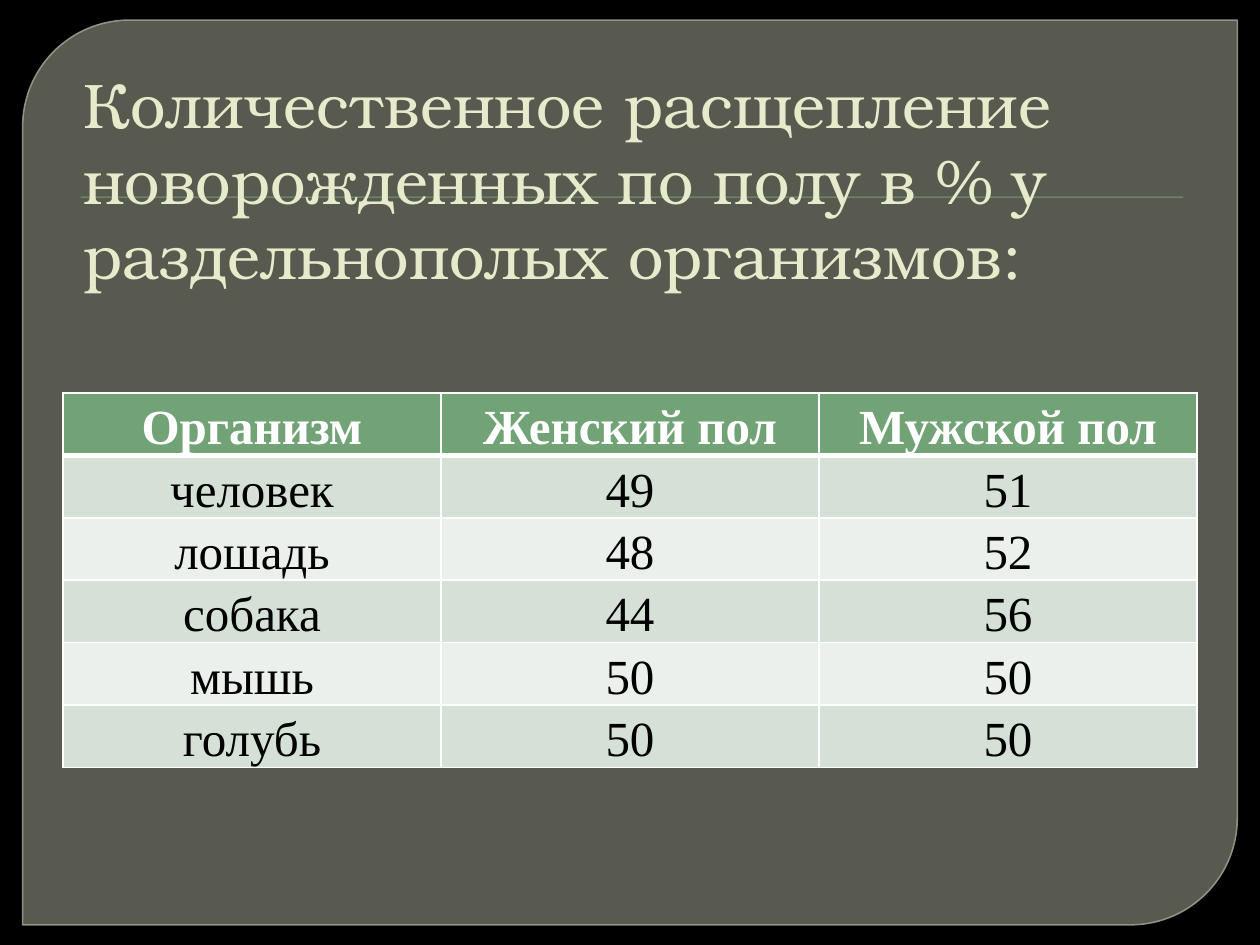
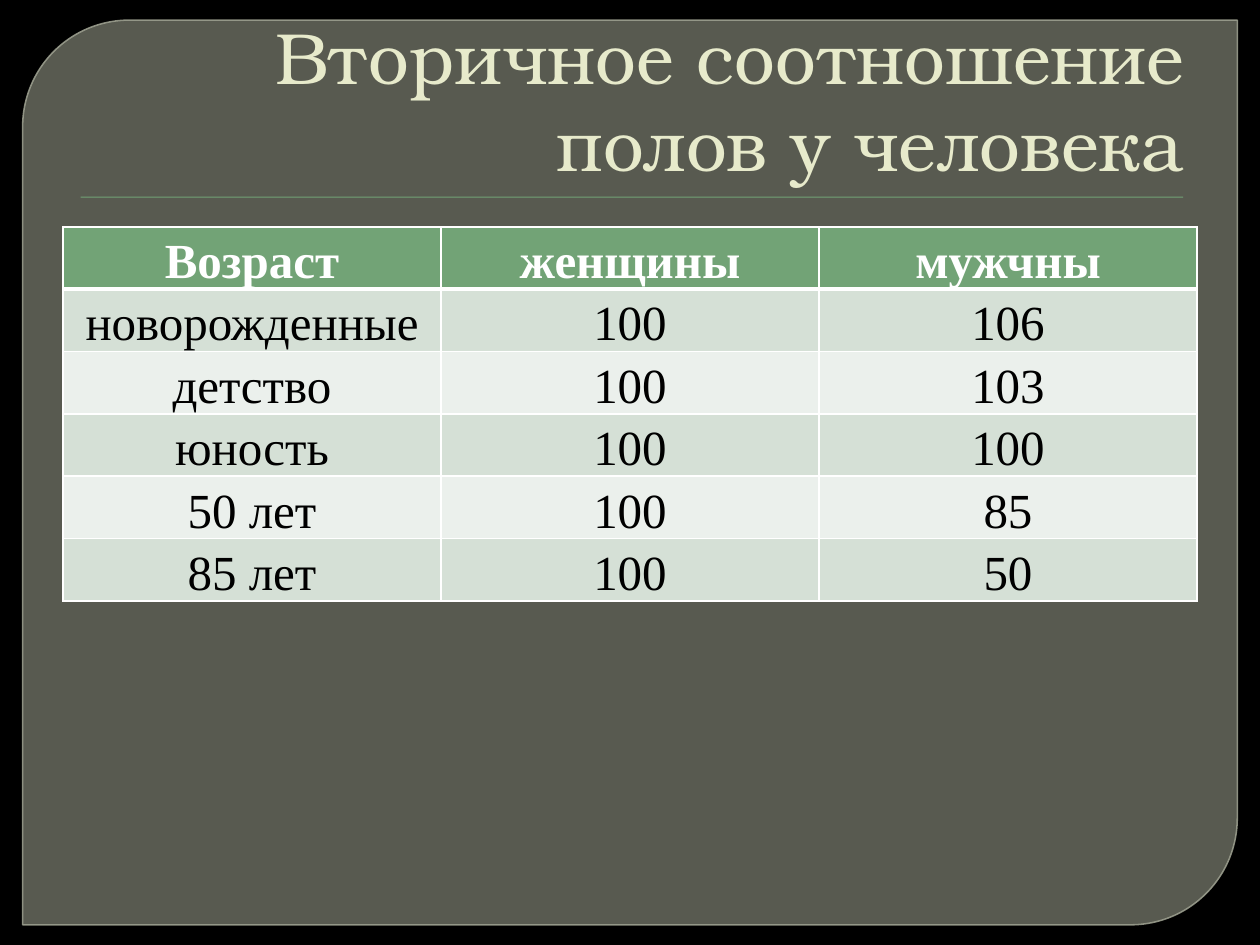
import pptx
import pptx.util
import pptx.dml.color
import pptx.enum.shapes
import pptx.enum.text
import pptx.oxml
import pptx.oxml.ns
import lxml.etree

Inches = pptx.util.Inches
Pt = pptx.util.Pt
qn = pptx.oxml.ns.qn

BLACK, WHITE = "000000", "FFFFFF"
PANEL, PANEL_EDGE = "888B7B", "9DA090"
GREEN, CREAM = "72A376", "E7EACB"
BAND_DARK, BAND_LIGHT = "D5E0D6", "EBF0EC"
TITLE_FONT, TABLE_FONT = "TeX Gyre Bonum", "Times New Roman"


def paint(fill, colour, opacity=100):
    fill.solid()
    fill.fore_color.rgb = pptx.dml.color.RGBColor.from_string(colour)
    if opacity < 100:
        tint = fill.fore_color._xFill[0]
        lxml.etree.SubElement(tint, qn("a:alpha")).set("val", str(opacity * 1000))


def add_span(para, text, font, size, colour, bold=False):
    span = para.add_run()
    span.text = text
    span.font.name = font
    span.font.size = Pt(size)
    span.font.bold = bold
    paint(span.font.fill, colour)


pages = [
    {
        "title": "Количественное расщепление новорожденных по полу в % у раздельнополых организмов:",
        "size": 36,
        "align": pptx.enum.text.PP_ALIGN.LEFT,
        "title_height": 2.69,
        "bottom_inset": 0.65,
        "table_top": 3.12,
        "rows": [
            ("Организм", "Женский пол", "Мужской пол"),
            ("человек", "49", "51"),
            ("лошадь", "48", "52"),
            ("собака", "44", "56"),
            ("мышь", "50", "50"),
            ("голубь", "50", "50"),
        ],
    },
    {
        "title": "Вторичное соотношение полов у человека",
        "size": 41.4,
        "align": pptx.enum.text.PP_ALIGN.RIGHT,
        "title_height": 1.25,
        "bottom_inset": 0.05,
        "table_top": 1.8,
        "rows": [
            ("Возраст", "женщины", "мужчны"),
            ("новорожденные", "100", "106"),
            ("детство", "100", "103"),
            ("юность", "100", "100"),
            ("50 лет", "100", "85"),
            ("85 лет", "100", "50"),
        ],
    },
]

deck = pptx.Presentation()
deck.slide_width, deck.slide_height = Inches(10), Inches(7.5)
paint(deck.slide_master.background.fill, BLACK)
layout = deck.slide_layouts.get_by_name("Title Only")
slides = [deck.slides.add_slide(layout) for page in pages]

# Shared panel and title rule: drawn once, then moved to the layout
shapes = slides[0].shapes
panel = shapes.add_shape(pptx.enum.shapes.MSO_SHAPE.ROUND_2_DIAG_RECTANGLE,
                         Inches(0.18), Inches(0.16), Inches(9.64), Inches(7.18))
panel.adjustments[0], panel.adjustments[1] = 0.118, 0
paint(panel.fill, PANEL, 65)
paint(panel.line.fill, PANEL_EDGE, 88)
panel.line.width = Pt(0.87)
panel.shadow.inherit = False

rule = shapes.add_shape(pptx.enum.shapes.MSO_SHAPE.RECTANGLE,
                        Inches(0.64), Inches(1.56), Inches(8.75), Inches(0.01))
paint(rule.fill, GREEN)
rule.line.fill.background()
rule.shadow.inherit = False
effects = rule.element.spPr.find(qn("a:effectLst"))
shadow = lxml.etree.SubElement(effects, qn("a:outerShdw"), blurRad=str(Pt(1)),
                               dist=str(Pt(1)), dir="5400000", rotWithShape="0")
shade = lxml.etree.SubElement(shadow, qn("a:srgbClr"), val=BLACK)
lxml.etree.SubElement(shade, qn("a:alpha"), val="75000")

for position, shape in enumerate((panel, rule), start=2):
    layout.shapes.element.insert(position, shape.element)

for slide, page in zip(slides, pages):
    # Title
    title = slide.shapes.title
    title.left, title.top = Inches(0.5), Inches(0.28)
    title.width, title.height = Inches(9), Inches(page["title_height"])
    frame = title.text_frame
    frame.word_wrap = True
    frame.auto_size = pptx.enum.text.MSO_AUTO_SIZE.NONE
    frame.vertical_anchor = pptx.enum.text.MSO_ANCHOR.BOTTOM
    frame.margin_bottom = Inches(page["bottom_inset"])
    para = frame.paragraphs[0]
    para.alignment = page["align"]
    para._p.get_or_add_pPr().set("marL", str(Inches(0.06)))
    add_span(para, page["title"], TITLE_FONT, page["size"], CREAM)

    # Table
    rows = page["rows"]
    table = slide.shapes.add_table(len(rows), len(rows[0]), Inches(0.5), Inches(page["table_top"]),
                                   Inches(9), Inches(0.41 * len(rows))).table
    for row_number, texts in enumerate(rows):
        header = row_number == 0
        band = GREEN if header else (BAND_DARK if row_number % 2 else BAND_LIGHT)
        widths = {"L": 1, "R": 1, "T": 3 if row_number == 1 else 1, "B": 3 if header else 1}
        for column_number, text in enumerate(texts):
            cell = table.cell(row_number, column_number)
            cell.margin_left = cell.margin_right = Inches(0.07)
            cell.margin_top = cell.margin_bottom = 0
            for side, width in widths.items():
                border = lxml.etree.SubElement(cell._tc.get_or_add_tcPr(), qn("a:ln" + side),
                                               w=str(Pt(width)))
                ink = lxml.etree.SubElement(border, qn("a:solidFill"))
                lxml.etree.SubElement(ink, qn("a:srgbClr"), val=WHITE)
            paint(cell.fill, band)
            para = cell.text_frame.paragraphs[0]
            para.alignment = pptx.enum.text.PP_ALIGN.CENTER
            para.line_spacing = 1.15
            add_span(para, text, TABLE_FONT, 28, WHITE if header else BLACK, header)

deck.save("out.pptx")
